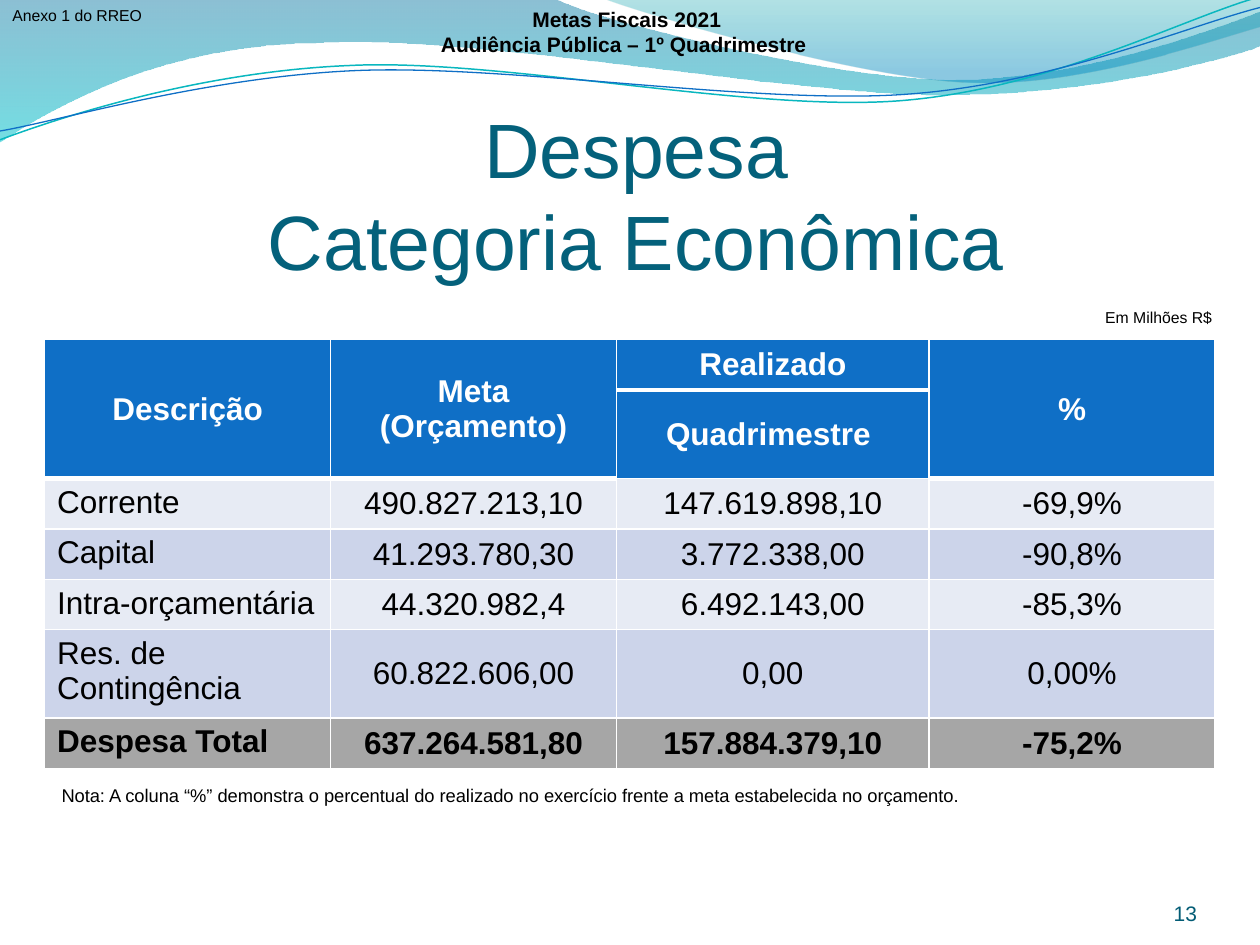
import pptx
import pptx.util
import pptx.dml.color
import pptx.enum.text
import pptx.oxml
import pptx.oxml.ns

color = pptx.dml.color.RGBColor.from_string
ALIGN = pptx.enum.text.PP_ALIGN
ANCHOR = pptx.enum.text.MSO_ANCHOR
qn = pptx.oxml.ns.qn
NAMESPACE = pptx.oxml.ns.nsdecls("a")

presentation = pptx.Presentation()
presentation.slide_width = pptx.util.Inches(10)
presentation.slide_height = pptx.util.Inches(7.5)
slide = presentation.slides.add_slide(presentation.slide_layouts[6])

# The slide is a grid of 100 columns by 75 rows
COLUMN = presentation.slide_width // 100
ROW = presentation.slide_height // 75


def add_wave(start, segments, closed):
    """Draw an outline; a segment is a line end (x, y) or a cubic curve (x1, y1, x2, y2, x, y)."""
    builder = slide.shapes.build_freeform(start[0] * COLUMN, start[1] * ROW)
    points = [(segment[i] * COLUMN, segment[i + 1] * ROW)
              for segment in segments for i in range(0, len(segment), 2)]
    builder.add_line_segments(points, close=closed)
    shape = builder.convert_to_shape()
    shape.shadow.inherit = False
    # Join each curve's three points into one cubic Bezier element
    steps = iter(list(shape.element.iter(qn("a:lnTo"))))
    for segment in segments:
        first = next(steps)
        if len(segment) == 6:
            first.tag = qn("a:cubicBezTo")
            for step in (next(steps), next(steps)):
                first.append(step[0])
                step.getparent().remove(step)
    return shape


def add_text(text, left, top, width, height, size, hex_color="000000", align=ALIGN.LEFT,
             anchor=ANCHOR.TOP, insets=(1, 0.5, 1, 0.5), bold=False):
    box = slide.shapes.add_textbox(round(left * COLUMN), round(top * ROW),
                                   round(width * COLUMN), round(height * ROW))
    frame = box.text_frame
    frame.word_wrap = True
    frame.vertical_anchor = anchor
    frame.margin_left, frame.margin_top, frame.margin_right, frame.margin_bottom = (
        round(inset * COLUMN) for inset in insets)
    frame.text = text
    for paragraph in frame.paragraphs:
        paragraph.alignment = align
        paragraph.font.name = "Arial"
        paragraph.font.size = pptx.util.Pt(size)
        paragraph.font.bold = bold
        paragraph.font.color.rgb = color(hex_color)


# Filled waves: start, segments, angle, stops of (position, colour, opacity)
filled_waves = [
    ((0, 0),
     [(44, -0.1), (47.6, 1.7, 66.4, 6.3, 75.8, 6.3), (85.3, 6.3, 95.8, 2.6, 100, 0.9),
      (100.1, 3.6), (98.3, 4.4, 87, 7.6, 74.6, 7.5), (62.2, 7.5, 38.2, 2.8, 25.7, 3.4),
      (12.9, 3.5, 4.6, 8.3, -0.1, 11.3), (0, 0)],
     270, [(0, "0074A0", 45), (1, "00C4CD", 55)]),
    ((47.9, -0.1),
     [(50.9, 1.1, 68.2, 6.2, 76.9, 6.5), (85.6, 6.9, 96.1, 3.2, 100, 2.1), (100, 0),
      (47.9, -0.1)],
     90, [(0.2, "008ABF", 45), (1, "00A0A8", 30)]),
]
for start, segments, angle, stops in filled_waves:
    wave = add_wave(start, segments, closed=True)
    wave.line.fill.background()
    wave.fill.gradient()
    wave.fill.gradient_angle = angle
    for stop, (position, hex_color, opacity) in zip(wave.fill.gradient_stops, stops):
        stop.position = position
        stop.color.rgb = color(hex_color)
    for element, (position, hex_color, opacity) in zip(wave.element.iter(qn("a:srgbClr")), stops):
        element.append(pptx.oxml.parse_xml(f'<a:alpha {NAMESPACE} val="{opacity * 1000}"/>'))

line_waves = [
    ((-0.2, 8.74), [(4.68, 7.17, 15.84, 4.09, 27.75, 4.16),
                    (39.57, 4.11, 59.14, 9.34, 71.17, 9.01),
                    (83.2, 8.67, 93.95, 3.57, 100, 2.16)], "09B7BF", 0.85),
    ((-0.16, 8.04), [(4.58, 7.47, 16.43, 4.52, 28.34, 4.58),
                     (40.35, 4.65, 59.58, 8.76, 71.6, 8.52),
                     (83.53, 8.28, 94.23, 4.18, 100.2, 2.96)], "0F6FC6", 0.75),
]
for start, segments, hex_color, width in line_waves:
    wave = add_wave(start, segments, closed=False)
    wave.rotation = -2.7
    wave.fill.background()
    wave.line.color.rgb = color(hex_color)
    wave.line.width = pptx.util.Pt(width)

add_text("Despesa\vCategoria Econômica", 5.5, 10.2, 90, 12.5, 44, "04617B",
         ALIGN.CENTER, ANCHOR.BOTTOM, (0, 0.5, 0, 0))

# Expense table
HEADER, LIGHT, DARK, TOTAL = "0F6FC6", "E7EBF4", "CCD4EA", "A6A6A6"
SINGLE, DOUBLE = 3.97, 6.97
rows = [
    (HEADER, SINGLE, ["Descrição", "Meta (Orçamento)", "Realizado", "%"]),
    (HEADER, DOUBLE, ["", "", "Quadrimestre ", ""]),
    (LIGHT, SINGLE, ["Corrente", "490.827.213,10", "147.619.898,10", "-69,9%"]),
    (DARK, SINGLE, ["Capital", "41.293.780,30", "3.772.338,00", "-90,8%"]),
    (LIGHT, SINGLE, ["Intra-orçamentária", "44.320.982,4", "6.492.143,00", "-85,3%"]),
    (DARK, DOUBLE, ["Res. de Contingência", "60.822.606,00", "0,00", "0,00%"]),
    (TOTAL, SINGLE, ["Despesa Total", "637.264.581,80", "157.884.379,10", "-75,2%"]),
]
column_widths = [22.7, 22.7, 24.8, 22.7]
REALIZED = 2
table = slide.shapes.add_table(
    len(rows), len(column_widths), round(3.54 * COLUMN), round(26.96 * ROW),
    round(sum(column_widths) * COLUMN), round(sum(height for _, height, _ in rows) * ROW)).table
table.first_row = False
table.horz_banding = False
for column, width in zip(table.columns, column_widths):
    column.width = round(width * COLUMN)

for row_index, (fill, height, texts) in enumerate(rows):
    table.rows[row_index].height = round(height * ROW)
    for column_index, text in enumerate(texts):
        cell = table.cell(row_index, column_index)
        # The thick rule lies under "Realizado" and under the merged header cells
        thick_row = 0 if column_index == REALIZED else 1
        thick_sides = {thick_row: "B", thick_row + 1: "T"}
        properties = cell._tc.get_or_add_tcPr()
        for side in "LRTB":
            line_width = pptx.util.Pt(3 if thick_sides.get(row_index) == side else 0.96)
            properties.append(pptx.oxml.parse_xml(
                f'<a:ln{side} {NAMESPACE} w="{line_width}"><a:solidFill>'
                f'<a:srgbClr val="FFFFFF"/></a:solidFill></a:ln{side}>'))
        cell.fill.solid()
        cell.fill.fore_color.rgb = color(fill)
        label = column_index == 0 and fill != HEADER
        cell.vertical_anchor = ANCHOR.TOP if label else ANCHOR.MIDDLE
        cell.text = text
        paragraph = cell.text_frame.paragraphs[0]
        paragraph.alignment = ALIGN.LEFT if label else ALIGN.CENTER
        paragraph.font.name = "Arial"
        paragraph.font.size = pptx.util.Pt(18)
        paragraph.font.bold = fill in (HEADER, TOTAL)
        paragraph.font.color.rgb = color("FFFFFF" if fill == HEADER else "000000")
for column_index in range(len(column_widths)):
    if column_index != REALIZED:
        table.cell(0, column_index).merge(table.cell(1, column_index))

add_text("13", 86.7, 69.5, 8.3, 4, 12, "035C75", ALIGN.RIGHT, ANCHOR.BOTTOM, (0, 0, 0, 0))
add_text("Em Milhões R$", 86.7, 23.9, 10.5, 2.5, 9, align=ALIGN.CENTER,
         insets=(0.5, 0.5, 0.5, 0.5))
add_text("Anexo 1 do RREO", 0, 0, 13.6, 2.5, 9)
add_text("Nota: A coluna “%” demonstra o percentual do realizado no exercício frente a meta "
         "estabelecida no orçamento.", 3.9, 61.74, 81, 2.7, 10.5)
add_text("Metas Fiscais 2021\nAudiência Pública – 1º Quadrimestre ", 32.8, 0, 33.9, 5, 12,
         align=ALIGN.CENTER, anchor=ANCHOR.MIDDLE, bold=True)

presentation.save("out.pptx")
